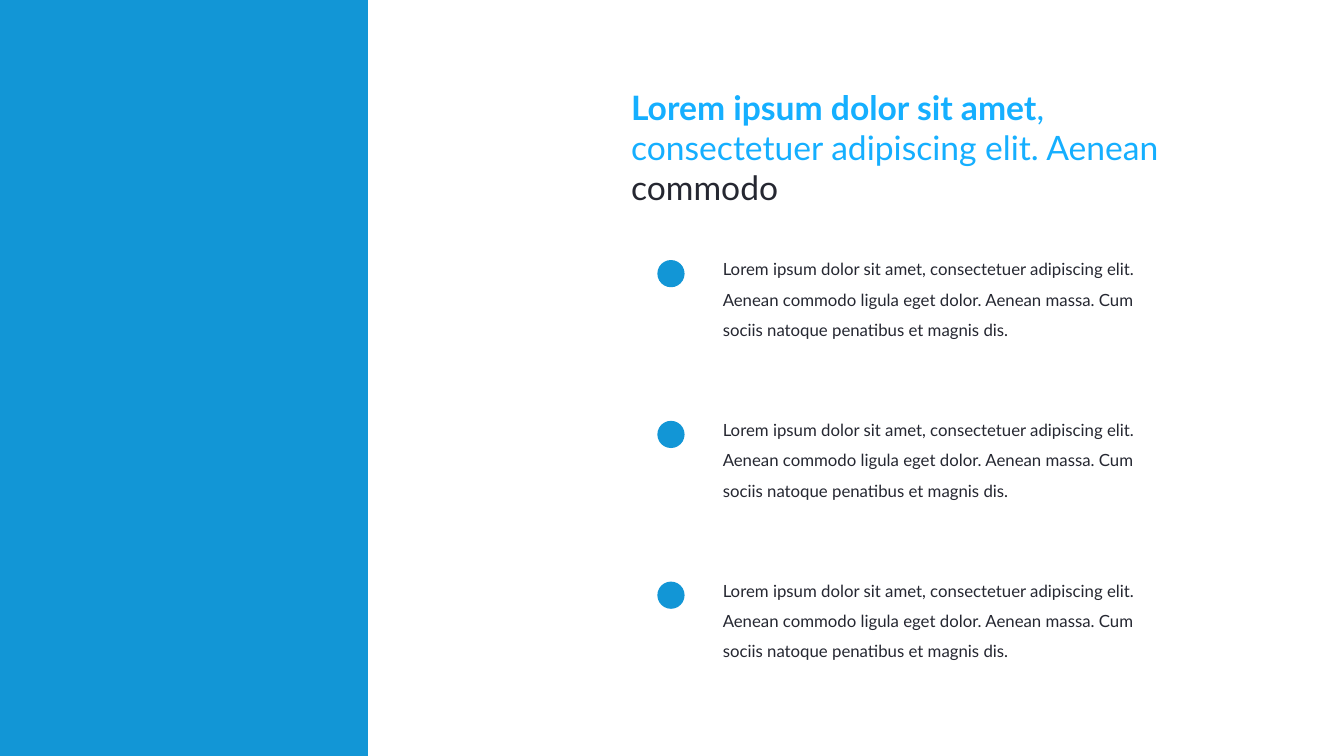
from pptx import Presentation
from pptx.dml.color import RGBColor
from pptx.enum.shapes import MSO_SHAPE
from pptx.enum.text import MSO_ANCHOR, MSO_AUTO_SIZE, PP_ALIGN
from pptx.util import Inches, Pt

RECT, OVAL = MSO_SHAPE.RECTANGLE, MSO_SHAPE.OVAL
TOP, LEFT, GROW = MSO_ANCHOR.TOP, PP_ALIGN.LEFT, MSO_AUTO_SIZE.SHAPE_TO_FIT_TEXT

BLUE, SKY, DARK = "1296D6", "15AFFF", "252731"
TITLE = [
    ("Lorem ipsum dolor sit amet", SKY, True),
    (", consectetuer adipiscing elit. Aenean ", SKY, False),
    ("commodo", DARK, False),
]
ITEMS = [
    "Lorem ipsum dolor sit amet, consectetuer adipiscing elit. Aenean commodo "
    "ligula eget dolor. Aenean massa. Cum sociis natoque penatibus et magnis dis."
] * 3
FIRST, STEP = 2.42, 1.595
DOT, DROP = 0.27, 0.16


def color(code):
    return RGBColor.from_string(code)


def block(slide, kind, x, y, w, h):
    """Add a plain blue shape."""
    shape = slide.shapes.add_shape(kind, Inches(x), Inches(y), Inches(w), Inches(h))
    shape.shadow.inherit = False
    shape.fill.solid()
    shape.fill.fore_color.rgb = color(BLUE)
    shape.line.fill.background()


def write(box, runs, size=12, lead=1.0):
    """Fill a box with one paragraph of (text, colour, bold) runs."""
    frame = box.text_frame
    frame.word_wrap = True
    frame.auto_size = GROW
    frame.vertical_anchor = TOP
    para = frame.paragraphs[0]
    para.alignment = LEFT
    para.line_spacing = lead
    for text, hue, bold in runs:
        run = para.add_run()
        run.text = text
        run.font.name = "Lato"
        run.font.size = Pt(size)
        run.font.bold = bold
        run.font.color.rgb = color(hue)


def main():
    deck = Presentation()
    deck.slide_width, deck.slide_height = Inches(13.33), Inches(7.5)
    slide = deck.slides.add_slide(deck.slide_layouts.get_by_name("Title Only"))

    block(slide, RECT, 0, 0, 3.65, 7.5)

    title = slide.shapes.title
    title.left, title.top = Inches(6.16), Inches(0.81)
    title.width, title.height = Inches(5.88), Inches(1.31)
    write(title, TITLE, size=24)

    for i, text in enumerate(ITEMS):
        y = FIRST + i * STEP
        block(slide, OVAL, 6.52, y + DROP, DOT, DOT)
        box = slide.shapes.add_textbox(
            Inches(7.07), Inches(y), Inches(4.68), Inches(1.01))
        write(box, [(text, DARK, False)], lead=1.5)

    deck.save("out.pptx")


if __name__ == "__main__":
    main()
